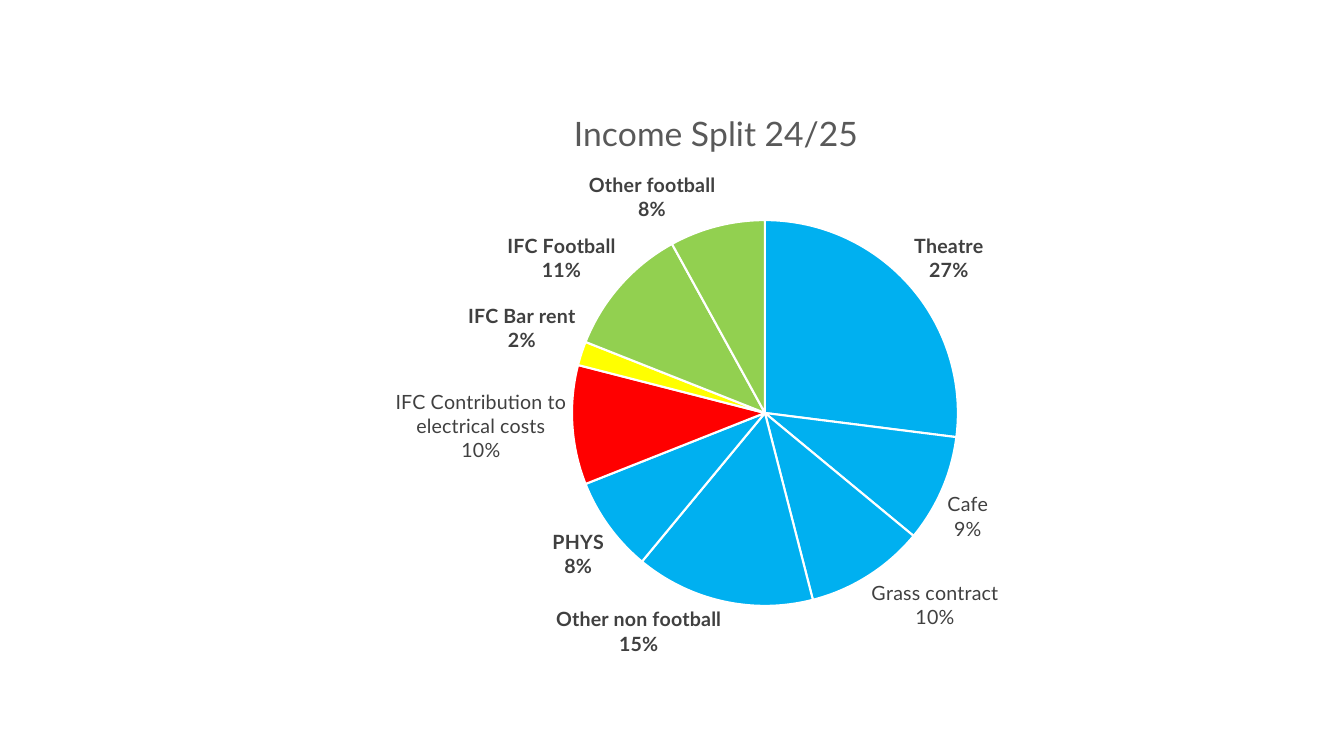
from dataclasses import dataclass

from lxml import etree
from pptx import Presentation
from pptx import util as u
from pptx.chart.data import CategoryChartData
from pptx.dml.color import RGBColor
from pptx.enum import chart as ch
from pptx.oxml import ns


@dataclass(frozen=True)
class Theme:
    font: str = "Lato"
    title_size: int = 24
    label_size: int = 14
    title_grey: str = "595959"
    label_grey: str = "404040"
    white: str = "FFFFFF"
    blue: str = "00B0F0"
    red: str = "FF0000"
    yellow: str = "FFFF00"
    green: str = "92D050"


THEME = Theme()

# Category, share, slice colour, bold label
INCOME = [
    ("Theatre", 0.27, THEME.blue, True),
    ("Cafe", 0.09, THEME.blue, False),
    ("Grass contract", 0.10, THEME.blue, False),
    ("Other non football", 0.15, THEME.blue, True),
    ("PHYS", 0.08, THEME.blue, True),
    ("IFC Contribution to electrical costs", 0.10, THEME.red, False),
    ("IFC Bar rent", 0.02, THEME.yellow, True),
    ("IFC Football", 0.11, THEME.green, True),
    ("Other football", 0.08, THEME.green, True),
]


class SlideBuilder:
    def __init__(self, page, theme):
        self.page = page
        self.theme = theme

    def style_font(self, font, size, colour, bold=False):
        values = {"name": self.theme.font, "size": u.Pt(size), "bold": bold}
        for name, value in values.items():
            setattr(font, name, value)
        font.color.rgb = RGBColor.from_string(colour)

    def pie(self, title, rows, frame, plot_layout):
        data = CategoryChartData(number_format="0%")
        data.categories = [row[0] for row in rows]
        data.add_series("Income", [row[1] for row in rows])
        lengths = [u.Inches(value) for value in frame]
        chart = self.page.shapes.add_chart(
            ch.XL_CHART_TYPE.PIE, *lengths, data).chart
        chart.has_legend = False
        self.style_font(chart.font, self.theme.label_size, self.theme.label_grey)
        self.chart_title(chart, title)
        self.place_plot(chart, plot_layout)
        plot = chart.plots[0]
        plot.vary_by_categories = True
        series = plot.series[0]
        self.slice_labels(series)
        for index, (name, share, colour, bold) in enumerate(rows):
            point = series.points[index]
            self.slice_format(point, colour)
            if not bold:
                self.plain_label(point, name, share)

    def chart_title(self, chart, title):
        chart.has_title = True
        chart.chart_title.include_in_layout = False
        para = chart.chart_title.text_frame.paragraphs[0]
        span = para.add_run()
        span.text = title
        self.style_font(span.font, self.theme.title_size, self.theme.title_grey)

    def place_plot(self, chart, plot_layout):
        area = chart.element.find(".//" + ns.qn("c:plotArea"))
        for old in area.findall(ns.qn("c:layout")):
            area.remove(old)
        layout = etree.Element(ns.qn("c:layout"))
        manual = etree.SubElement(layout, ns.qn("c:manualLayout"))
        values = {"layoutTarget": "inner", "xMode": "edge", "yMode": "edge",
                  **plot_layout}
        for name, value in values.items():
            etree.SubElement(manual, ns.qn("c:" + name), val=str(value))
        area.insert(0, layout)

    def slice_format(self, point, colour):
        point.format.fill.solid()
        point.format.fill.fore_color.rgb = RGBColor.from_string(colour)
        line = point.format.line
        line.width = u.Pt(1.5)
        line.color.rgb = RGBColor.from_string(self.theme.white)

    def slice_labels(self, series):
        labels = series.data_labels
        values = {
            "show_category_name": True,
            "show_value": True,
            "number_format": "0%",
            "number_format_is_linked": False,
            "position": ch.XL_LABEL_POSITION.OUTSIDE_END,
        }
        for name, value in values.items():
            setattr(labels, name, value)
        self.style_font(labels.font, self.theme.label_size,
                        self.theme.label_grey, True)
        # Put the share on its own line
        element = series._element.find(ns.qn("c:dLbls"))
        separator = etree.Element(ns.qn("c:separator"))
        separator.text = "\n"
        element.find(ns.qn("c:showBubbleSize")).addnext(separator)
        element.find(ns.qn("c:showLeaderLines")).set("val", "0")

    def plain_label(self, point, name, share):
        label = point.data_label
        frame = label.text_frame
        frame.text = f"{name}\n{share:.0%}"
        for para in frame.paragraphs:
            for span in para.runs:
                self.style_font(span.font, self.theme.label_size,
                                self.theme.label_grey)
        label.position = ch.XL_LABEL_POSITION.OUTSIDE_END


def main():
    deck = Presentation()
    deck.slide_width = u.Inches(13.33)
    deck.slide_height = u.Inches(7.5)
    page = deck.slides.add_slide(deck.slide_layouts[6])

    # Income chart
    builder = SlideBuilder(page, THEME)
    builder.pie("Income Split 24/25", INCOME, (2.23, 0.85, 9.74, 5.8),
                {"x": 0.35, "y": 0.23, "w": 0.4, "h": 0.66})
    deck.save("out.pptx")


if __name__ == "__main__":
    main()
